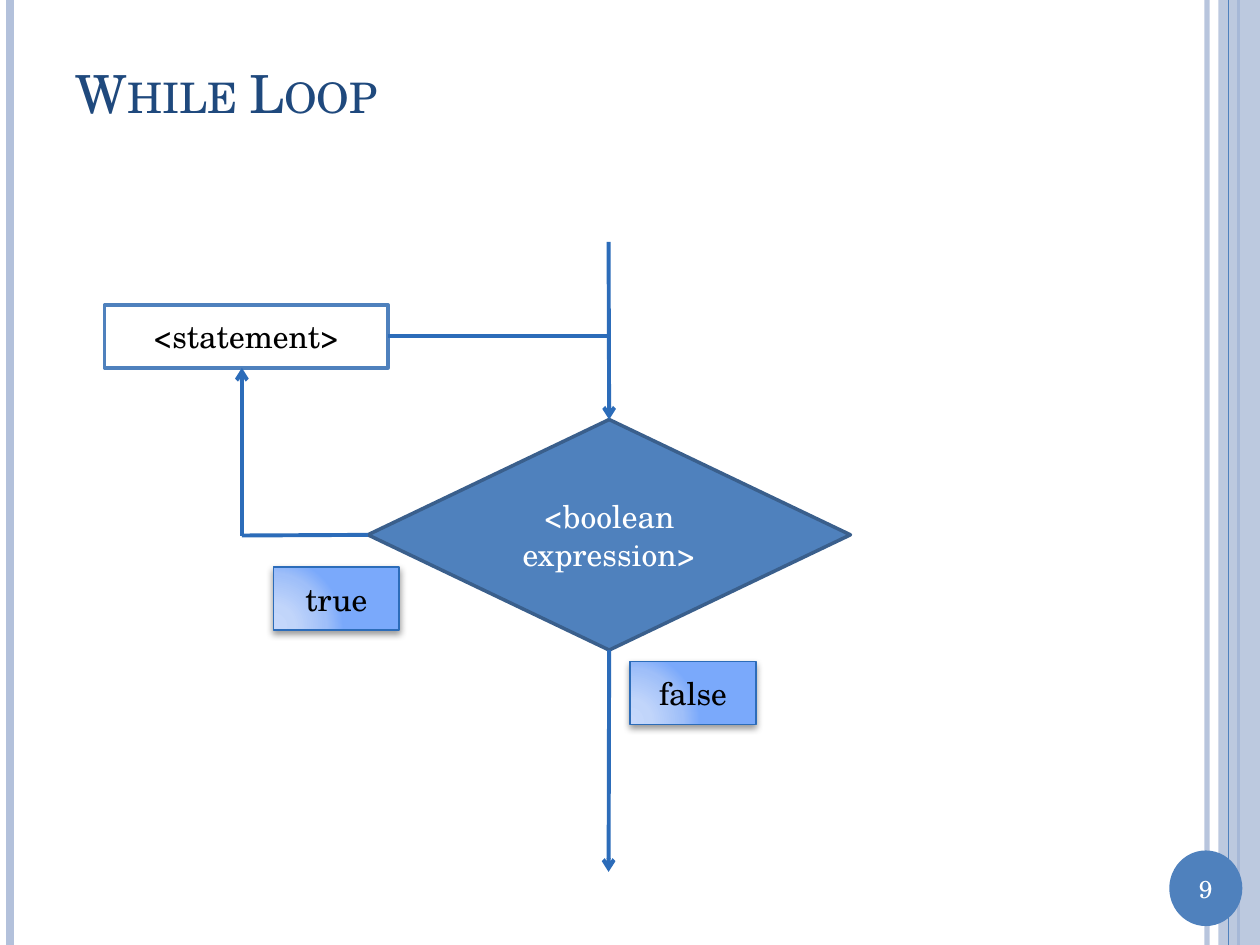
from lxml import etree
from pptx import Presentation
from pptx.dml.color import RGBColor
from pptx.enum import shapes, text
from pptx.oxml import parse_xml
from pptx.oxml.ns import nsdecls, qn
from pptx.util import Inches, Pt

FONT = "TeX Gyre Schola"
BLUE, PALE, FLOW = "4F81BD", "B3C1DB", "2C6CB9"
LABEL_STOPS = [(0, "C7D8FB"), (30, "C1D5FA"), (75, "9FBFF9"), (100, "7AA9FB")]


def color(value):
    return RGBColor.from_string(value)


def set_alpha(element, percent):
    for tone in element.iter(qn("a:srgbClr")):
        etree.SubElement(tone, qn("a:alpha"), val=str(percent * 1000))


def write(frame, words, size, ink, align=text.PP_ALIGN.CENTER):
    frame.vertical_anchor = text.MSO_ANCHOR.MIDDLE
    frame.word_wrap = True
    para = frame.paragraphs[0]
    para.text = words
    para.alignment = align
    para.font.name = FONT
    para.font.size = Pt(size)
    para.font.color.rgb = color(ink)
    return para


def add_box(page, kind, at, fill, edge=None, width=2):
    box = page.shapes.add_shape(kind, *map(Inches, at))
    box.shadow.inherit = False
    box.fill.solid()
    box.fill.fore_color.rgb = color(fill)
    if edge:
        box.line.color.rgb = color(edge)
        box.line.width = Pt(width)
    else:
        box.line.fill.background()
    return box


def add_line(page, start, end, tone=FLOW, width=2.25, arrow=False):
    line = page.shapes.add_connector(
        shapes.MSO_CONNECTOR.STRAIGHT, *map(Inches, (*start, *end)))
    line.line.color.rgb = color(tone)
    line.line.width = Pt(width)
    properties = line._element.spPr
    etree.SubElement(properties, qn("a:effectLst"))
    if arrow:
        etree.SubElement(properties.find(qn("a:ln")), qn("a:tailEnd"), type="arrow")
    return line


def add_label(page, left, top, words):
    box = add_box(page, shapes.MSO_SHAPE.RECTANGLE, (left, top, 1, 0.5),
                  LABEL_STOPS[-1][1], FLOW, 1)
    properties = box._element.spPr
    stops = "".join(f'<a:gs pos="{place * 1000}"><a:srgbClr val="{tone}"/></a:gs>'
                    for place, tone in LABEL_STOPS)
    gradient = parse_xml(
        f'<a:gradFill {nsdecls("a")}><a:gsLst>{stops}</a:gsLst><a:path path="circle">'
        '<a:fillToRect l="5000" t="100000" r="120000" b="10000"/></a:path></a:gradFill>')
    properties.replace(properties.find(qn("a:solidFill")), gradient)
    shadow = etree.SubElement(
        properties.find(qn("a:effectLst")), qn("a:outerShdw"),
        blurRad=str(Pt(4)), dist=str(Pt(2)), dir="5400000", rotWithShape="0")
    etree.SubElement(shadow, qn("a:srgbClr"), val="000000")
    set_alpha(shadow, 40)
    write(box.text_frame, words, 18, "000000")


def add_frame(page):
    def rail(x, tone, width):
        return add_line(page, (x, 0), (x, 7.5), tone, width)

    set_alpha(rail(9.58, PALE, 3)._element.spPr, 93)
    rail(0.08, PALE, 4.5)
    rail(9.83, BLUE, 1.5)
    band = add_box(page, shapes.MSO_SHAPE.RECTANGLE, (9.67, 0, 0.33, 7.5), PALE)
    set_alpha(band._element.spPr, 87)
    rail(9.75, BLUE, 0.75)
    badge = add_box(page, shapes.MSO_SHAPE.OVAL, (9.28, 6.75, 0.58, 0.6), BLUE)
    write(badge.text_frame, "9", 14, "FFFFFF")


def add_title(page, words):
    title = page.shapes.title
    title.left, title.top, title.width, title.height = map(Inches, (0.5, 0.3, 8.67, 0.87))
    para = write(title.text_frame, words, 30, "1F497D", text.PP_ALIGN.LEFT)
    para.font._element.set("cap", "small")


def add_flow(page):
    middle, turn = 4.83, 1.92
    decision = add_box(page, shapes.MSO_SHAPE.FLOWCHART_DECISION,
                       (2.92, 3.33, 3.83, 1.83), BLUE, "3A5F8C")
    write(decision.text_frame, "<boolean expression>", 18, "FFFFFF")
    statement = add_box(page, shapes.MSO_SHAPE.RECTANGLE,
                        (0.83, 2.42, 2.25, 0.5), "FFFFFF", BLUE)
    write(statement.text_frame, "<statement>", 18, "000000")

    add_line(page, (2.92, 4.25), (turn, 4.25)).begin_connect(decision, 1)
    add_line(page, (turn, 4.25), (turn, 2.92), arrow=True)
    add_line(page, (middle, 5.17), (middle, 6.92), arrow=True).begin_connect(decision, 2)
    add_line(page, (middle, 2.67), (3.08, 2.67)).end_connect(statement, 3)
    add_label(page, 2.17, 4.5, "true")
    add_label(page, 5, 5.25, "false")
    add_line(page, (middle, 1.92), (middle, 3.33), arrow=True).end_connect(decision, 0)


def main():
    deck = Presentation()
    deck.slide_width, deck.slide_height = Inches(10), Inches(7.5)
    page = deck.slides.add_slide(deck.slide_layouts[5])
    add_frame(page)
    add_title(page, "While Loop")
    add_flow(page)
    deck.save("out.pptx")


if __name__ == "__main__":
    main()
